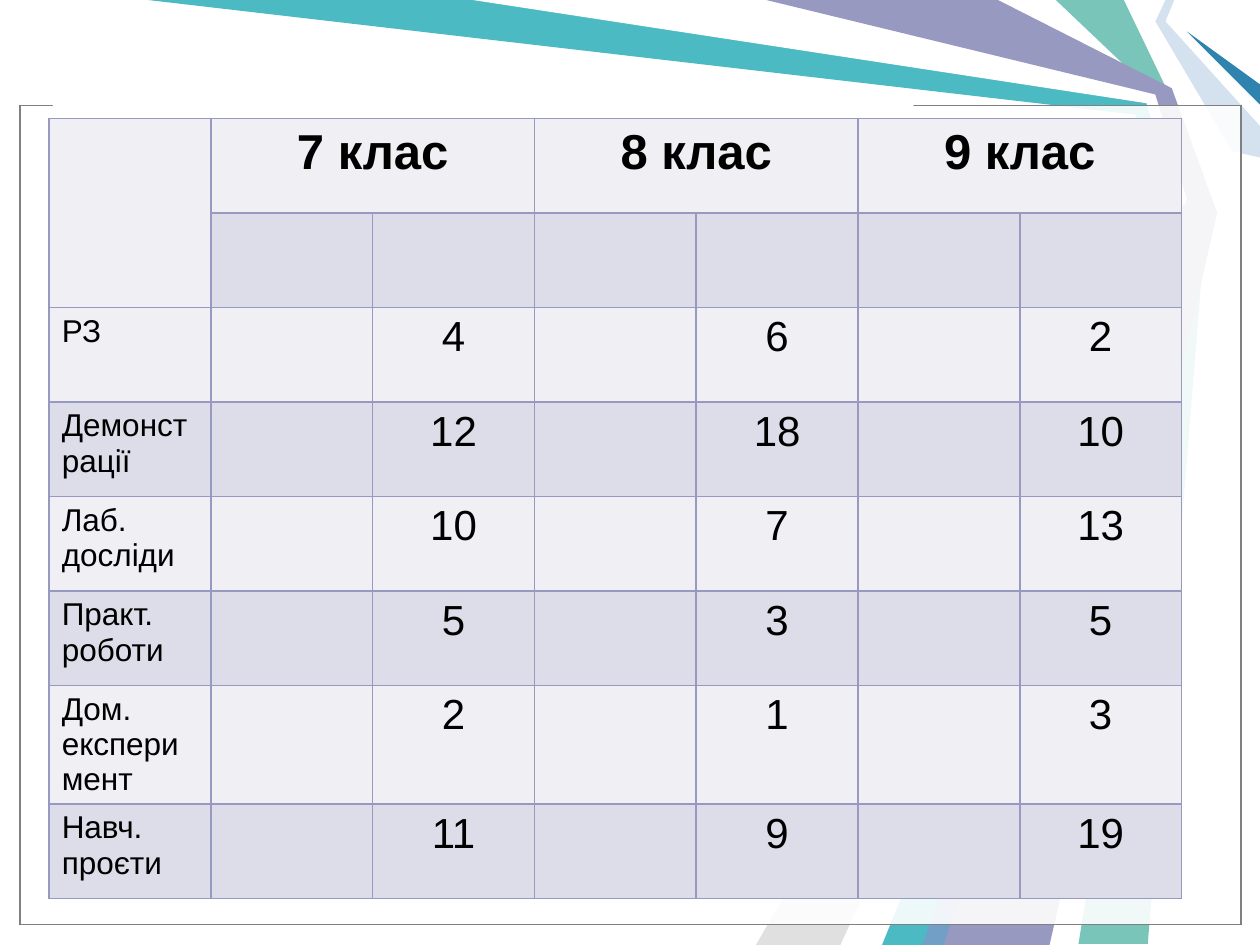
from lxml.etree import SubElement
from pptx import Presentation
from pptx.dml.color import RGBColor
from pptx.enum.shapes import MSO_SHAPE
from pptx.enum.text import PP_ALIGN
from pptx.oxml import parse_xml
from pptx.oxml.ns import nsdecls, qn
from pptx.util import Inches, Pt

WHITE = RGBColor(0xFF, 0xFF, 0xFF)
BLACK = RGBColor(0x00, 0x00, 0x00)
GREY = RGBColor(0x80, 0x80, 0x80)
SILVER = RGBColor(0xE0, 0xE0, 0xE0)
GREEN = RGBColor(0x7A, 0xC5, 0xB9)
TEAL = RGBColor(0x4B, 0xBA, 0xC3)
PALE_BLUE = RGBColor(0xD4, 0xE1, 0xEE)
DEEP_BLUE = RGBColor(0x2F, 0x84, 0xAF)
SKY = RGBColor(0x71, 0x9F, 0xC5)
VIOLET = RGBColor(0x98, 0x99, 0xC1)
BANDS = RGBColor(0xEF, 0xEF, 0xF4), RGBColor(0xDD, 0xDD, 0xE9)

RAYS = [
    (GREEN, [(8.92, 0), (9.29, 0.77), (9.58, 1.67), (9.11, 7.49), (8.56, 7.49),
             (9.5, 1.67), (9.17, 0.75), (8.38, 0)]),
    (TEAL, [(1.17, 0), (3.83, 0), (9.14, 0.78), (9.42, 1.69), (7.42, 7.5),
            (6.92, 7.5), (9.35, 1.73), (9.01, 0.91)]),
    (SILVER, [(6.67, 7.5), (9.27, 1.81), (6, 7.5)]),
    (WHITE, [(3.75, 0), (9.1, 0.82), (9.32, 1.62), (6.75, 7.5), (7, 7.5),
             (9.41, 1.58), (9.17, 0.75), (6, 0)]),
    (PALE_BLUE, [(9.25, 0), (9.17, 0.17), (9.78, 1.2), (10, 1.25), (10, 1),
                 (9.25, 0.17), (9.32, 0)]),
    (DEEP_BLUE, [(10, 0.83), (9.42, 0.25), (10, 0.67)]),
    (VIOLET, [(6.08, 0), (7.92, 0), (9.3, 0.7), (9.66, 1.69), (8.33, 7.5),
              (7.33, 7.5), (9.42, 1.58), (9.17, 0.75)]),
    (SKY, [(7.32, 7.5), (9.32, 1.83), (7.49, 7.5)]),
]

GRADES = ["7 клас", "8 клас", "9 клас"]
COUNTS = [
    ("РЗ", 4, 6, 2),
    ("Демонстрації", 12, 18, 10),
    ("Лаб.\nдосліди", 10, 7, 13),
    ("Практ.\nроботи", 5, 3, 5),
    ("Дом.\nексперимент", 2, 1, 3),
    ("Навч.\nпроєти", 11, 9, 19),
]
TITLE = {"size": Pt(28), "bold": True}
LABEL = {"size": Pt(18), "bold": False}
NUMBER = {"size": Pt(24), "bold": False}


def paint(sp, fill, line=None):
    """Give a shape a flat fill and an optional thin outline."""
    sp.shadow.inherit = False
    sp.fill.solid()
    sp.fill.fore_color.rgb = fill
    if line is None:
        sp.line.fill.background()
    else:
        sp.line.color.rgb = line
        sp.line.width = Pt(0.75)


def add_ray(s, color, points):
    """Draw one filled polygon of the background."""
    (x, y), *rest = [(Inches(px), Inches(py)) for px, py in points]
    builder = s.shapes.build_freeform(x, y)
    builder.add_line_segments(rest, close=True)
    paint(builder.convert_to_shape(), color)


def add_rect(s, box, line=None, alpha=None):
    """Draw a white rectangle, see-through when alpha is given in percent."""
    sp = s.shapes.add_shape(MSO_SHAPE.RECTANGLE, *map(Inches, box))
    paint(sp, WHITE, line)
    if alpha is not None:
        color = sp.fill._xPr.find(qn("a:solidFill"))[0]
        SubElement(color, qn("a:alpha")).set("val", str(alpha * 1000))


def style_cell(cell, fill):
    """Fill a cell and rule its four sides."""
    cell.fill.solid()
    cell.fill.fore_color.rgb = fill
    tcPr = cell._tc.get_or_add_tcPr()
    for i, side in enumerate("LRTB"):
        tcPr.insert(i, parse_xml(
            f'<a:ln{side} {nsdecls("a")} w="{Pt(1)}"><a:solidFill>'
            f'<a:srgbClr val="{VIOLET}"/></a:solidFill></a:ln{side}>'))


def write(cell, text, font, align=PP_ALIGN.CENTER):
    """Put formatted text in a cell, one paragraph a line."""
    cell.text = text
    for p in cell.text_frame.paragraphs:
        p.alignment = align
        for r in p.runs:
            for name, value in {"name": "Arial", **font}.items():
                setattr(r.font, name, value)
            r.font.color.rgb = BLACK


def add_counts_table(s):
    """Build the table of activities by grade."""
    rows, cols = len(COUNTS) + 2, 2 * len(GRADES) + 1
    table = s.shapes.add_table(rows, cols, Inches(0.39), Inches(0.94),
                               Inches(1.284 * cols), Inches(0.75 * rows)).table
    table.first_row = table.horz_banding = False
    for i in range(rows):
        for j in range(cols):
            style_cell(table.cell(i, j), BANDS[i % 2])
    table.cell(0, 0).merge(table.cell(1, 0))
    for j, grade in enumerate(GRADES):
        cell = table.cell(0, 2 * j + 1)
        cell.merge(table.cell(0, 2 * j + 2))
        write(cell, grade, TITLE)
    for i, (label, *counts) in enumerate(COUNTS, 2):
        write(table.cell(i, 0), label, LABEL, PP_ALIGN.LEFT)
        for j, count in enumerate(counts):
            write(table.cell(i, 2 * j + 2), str(count), NUMBER)


def main():
    """Build and save the slide."""
    prs = Presentation()
    prs.slide_width, prs.slide_height = Inches(10), Inches(7.5)
    s = prs.slides.add_slide(prs.slide_layouts[6])
    for color, points in RAYS:
        add_ray(s, color, points)
    for line in (BLACK, GREY):
        add_rect(s, (0.16, 0.84, 9.69, 6.5), line, alpha=69)
    add_rect(s, (0.42, 0.74, 6.83, 0.17))
    add_counts_table(s)
    prs.save("out.pptx")


if __name__ == "__main__":
    main()
